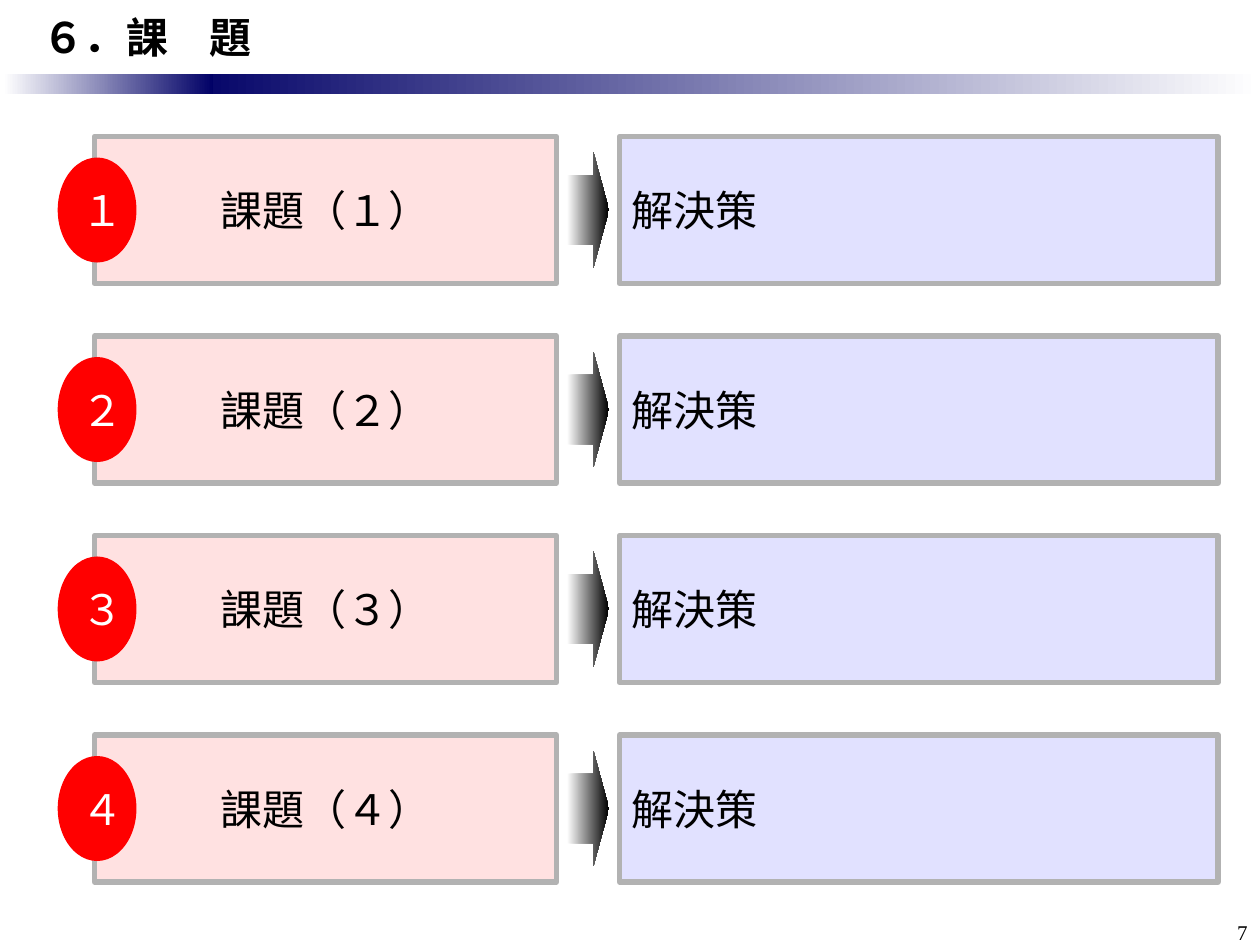
from lxml import etree
from pptx import Presentation
from pptx.dml.color import RGBColor
from pptx.enum import shapes, text
from pptx.oxml import ns
from pptx.util import Pt

TITLE = "６．課\u3000題".replace("\u3000", "　")
PAGE_NUMBER = "7"
ROWS = [
    ("１", "課題（１）", "解決策"),
    ("２", "課題（２）", "解決策"),
    ("３", "課題（３）", "解決策"),
    ("４", "課題（４）", "解決策"),
]

GOTHIC = "Noto Sans CJK JP"
SERIF = "Times New Roman"
BLACK = RGBColor(0x00, 0x00, 0x00)
WHITE = RGBColor(0xFF, 0xFF, 0xFF)
NAVY = RGBColor(0x00, 0x00, 0x66)
RED = RGBColor(0xFF, 0x00, 0x00)
PINK = RGBColor(0xFF, 0xE1, 0xE1)
LAVENDER = RGBColor(0xE1, 0xE1, 0xFF)
GRAY = RGBColor(0xB2, 0xB2, 0xB2)

SLIDE_WIDTH, SLIDE_HEIGHT = 720, 540
FIRST_ROW_TOP, ROW_HEIGHT, ROW_PITCH = 78, 84, 114
# Left, width and height of each part of a row; all are centred vertically.
ISSUE = (54, 264, ROW_HEIGHT)
NUMBER = (33, 45, 60)
ARROW = (324, 24, 66)
SOLUTION = (354, 342, ROW_HEIGHT)


def write(shape, words, align, size=24, color=BLACK, font_name=GOTHIC,
          bold=False, anchor=text.MSO_ANCHOR.MIDDLE, left_inset=7.2):
    frame = shape.text_frame
    frame.word_wrap = True
    frame.auto_size = text.MSO_AUTO_SIZE.NONE
    frame.vertical_anchor = anchor
    frame.margin_left, frame.margin_right = Pt(left_inset), Pt(7.2)
    frame.margin_top = frame.margin_bottom = Pt(3.6)
    frame.text = words
    paragraph = frame.paragraphs[0]
    paragraph.alignment = align
    font = paragraph.font
    font.size, font.bold, font.name = Pt(size), bold, font_name
    font.color.rgb = color
    # East Asian characters take their typeface from a separate element.
    properties = paragraph._p.pPr.find(ns.qn("a:defRPr"))
    etree.SubElement(properties, ns.qn("a:ea"), typeface=font_name)


def add_shape(slide, kind, left, top, width, height, fill, line=None):
    """Add a preset shape; a pair of colours as fill gives a gradient."""
    shape = slide.shapes.add_shape(kind, Pt(left), Pt(top), Pt(width), Pt(height))
    shape.shadow.inherit = False
    if isinstance(fill, RGBColor):
        shape.fill.solid()
        shape.fill.fore_color.rgb = fill
    else:
        shape.fill.gradient()
        shape.fill.gradient_angle = 0
        for stop, color in zip(shape.fill.gradient_stops, fill):
            stop.color.rgb = color
    if line is None:
        shape.line.fill.background()
    else:
        shape.line.color.rgb = line
        shape.line.width = Pt(3)
    return shape


def add_row(slide, index, number, issue, solution):
    middle = FIRST_ROW_TOP + index * ROW_PITCH + ROW_HEIGHT / 2
    kinds = shapes.MSO_SHAPE

    def add_part(kind, box, fill, line=None):
        left, width, height = box
        return add_shape(slide, kind, left, middle - height / 2, width, height,
                         fill, line)

    arrow = add_part(kinds.RIGHT_ARROW, ARROW, (WHITE, BLACK))
    arrow.adjustments[0], arrow.adjustments[1] = 0.6, 0.37
    issue_box = add_part(kinds.RECTANGLE, ISSUE, PINK, GRAY)
    write(issue_box, issue, text.PP_ALIGN.LEFT, left_inset=72)
    number_disc = add_part(kinds.OVAL, NUMBER, RED)
    write(number_disc, number, text.PP_ALIGN.CENTER, color=WHITE)
    solution_box = add_part(kinds.RECTANGLE, SOLUTION, LAVENDER, GRAY)
    write(solution_box, solution, text.PP_ALIGN.LEFT)


def main():
    presentation = Presentation()
    presentation.slide_width = Pt(SLIDE_WIDTH)
    presentation.slide_height = Pt(SLIDE_HEIGHT)
    slide = presentation.slides.add_slide(presentation.slide_layouts[5])

    title = slide.shapes.title
    title.left, title.top = Pt(0), Pt(0)
    title.width, title.height = Pt(SLIDE_WIDTH), Pt(42)
    write(title, TITLE, text.PP_ALIGN.LEFT, bold=True, left_inset=24)

    rectangle = shapes.MSO_SHAPE.RECTANGLE
    add_shape(slide, rectangle, 102, 42, 618, 12, (NAVY, WHITE))
    add_shape(slide, rectangle, 2, 42, 120, 12, (WHITE, NAVY))

    for index, row in enumerate(ROWS):
        add_row(slide, index, *row)

    page_number = slide.shapes.add_textbox(Pt(678), Pt(522), Pt(42), Pt(18))
    write(page_number, PAGE_NUMBER, text.PP_ALIGN.RIGHT, size=12,
          font_name=SERIF, anchor=text.MSO_ANCHOR.TOP)

    presentation.save("out.pptx")


if __name__ == "__main__":
    main()
